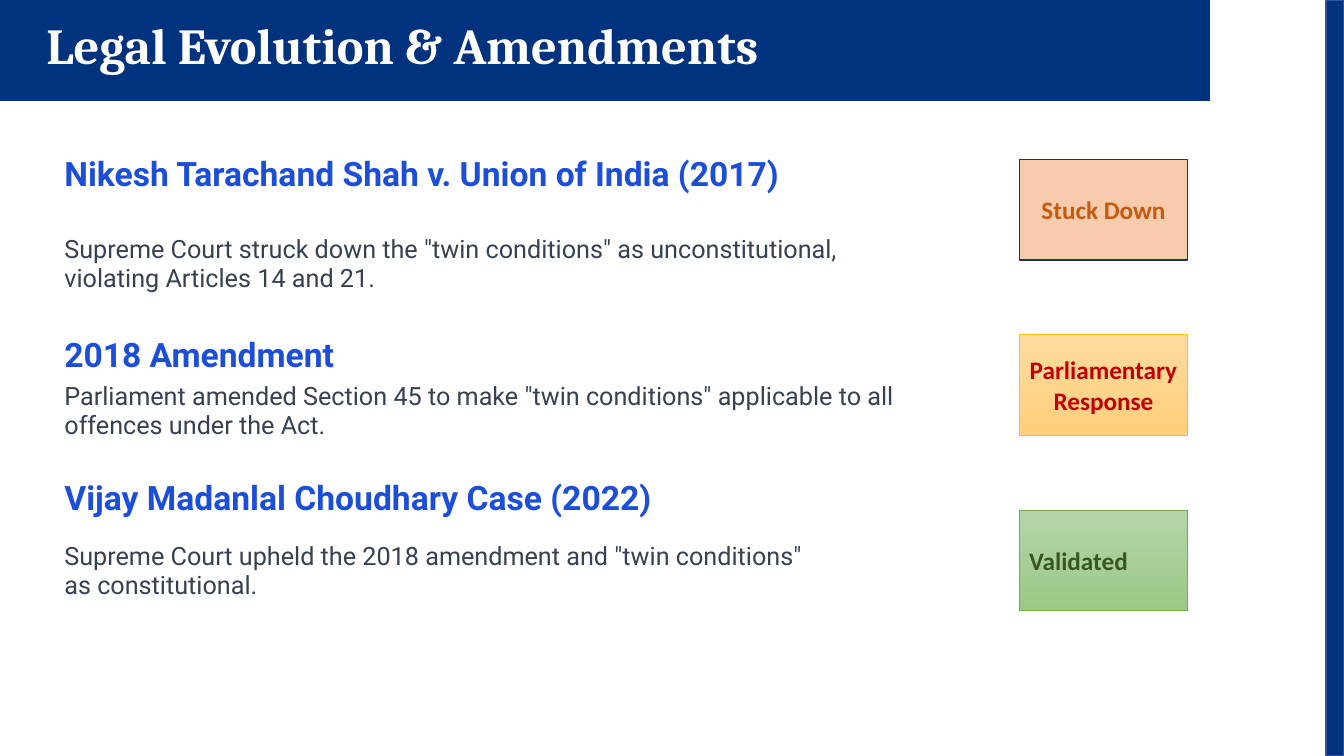
from dataclasses import dataclass

from pptx import Presentation
from pptx.dml.color import RGBColor
from pptx.enum.shapes import MSO_SHAPE
from pptx.enum.text import MSO_ANCHOR, MSO_AUTO_SIZE, PP_ALIGN
from pptx.util import Inches, Pt

RECTANGLE = MSO_SHAPE.RECTANGLE
TOP, MIDDLE = MSO_ANCHOR.TOP, MSO_ANCHOR.MIDDLE
LEFT, CENTER = PP_ALIGN.LEFT, PP_ALIGN.CENTER
NO_FIT, GROW = MSO_AUTO_SIZE.NONE, MSO_AUTO_SIZE.SHAPE_TO_FIT_TEXT
TITLE_ONLY = 5


@dataclass(frozen=True)
class Theme:
    navy: str = "00327D"
    navy_edge: str = "325491"
    white: str = "FFFFFF"
    heading: str = "1D4ED8"
    body: str = "374151"
    title_font: str = "Cambria"
    text_font: str = "Roboto"
    badge_font: str = "Calibri"
    title_size: int = 36
    heading_size: int = 24
    body_size: int = 18


@dataclass(frozen=True)
class Badge:
    label: str
    fills: tuple
    edge: str
    edge_width: float
    ink: str
    align: PP_ALIGN = CENTER


THEME = Theme()
TEXT_LEFT = 0.54
BADGE_LEFT, BADGE_TOP, BADGE_STEP = 10.11, 1.58, 1.74

HEADINGS = [
    ("Nikesh Tarachand Shah v. Union of India (2017)", 1.49, 7.47),
    ("2018 Amendment", 3.29, 6.67),
    ("Vijay Madanlal Choudhary Case (2022)", 4.71, 6.67),
]
SUMMARIES = [
    ('Supreme Court struck down the "twin conditions" as unconstitutional, '
     "violating Articles 14 and 21.", 2.27, 8.52),
    ('Parliament amended Section 45 to make "twin conditions" applicable to all '
     "offences under the Act.", 3.73, 8.52),
    ('Supreme Court upheld the 2018 amendment and "twin conditions" '
     "as constitutional.", 5.32, 7.74),
]
BADGES = [
    Badge("Stuck Down", ("F8CBAD",), "1E3256", 1, "C55A11"),
    Badge("Parliamentary Response", ("FFDB9E", "FFD07C"), "FFC000", 0.5, "C00000"),
    Badge("Validated", ("B5D5A7", "9CC987"), "70AD47", 0.5, "385723", LEFT),
]


def color(value):
    return RGBColor.from_string(value)


def style(para, font, size, ink, bold=False):
    para.font.name = font
    para.font.size = Pt(size)
    para.font.color.rgb = color(ink)
    para.font.bold = bold


def paint(shape, fills, edge=None, edge_width=1):
    shape.shadow.inherit = False
    if len(fills) == 1:
        shape.fill.solid()
        shape.fill.fore_color.rgb = color(fills[0])
    else:
        shape.fill.gradient()
        shape.fill.gradient_angle = 270
        for stop, value in zip(shape.fill.gradient_stops, fills):
            stop.color.rgb = color(value)
    if edge:
        shape.line.color.rgb = color(edge)
        shape.line.width = Pt(edge_width)
    else:
        shape.line.fill.background()


def add_frame(page):
    builder = page.shapes.build_freeform(0, 0, scale=Inches(1))
    builder.add_line_segments([(0, 1.05), (11.75, 1.05), (12.07, 0)])
    paint(builder.convert_to_shape(), (THEME.navy,))
    stripe = page.shapes.add_shape(
        RECTANGLE, Inches(13.15), 0, Inches(0.18), Inches(7.5))
    paint(stripe, (THEME.navy,), THEME.navy_edge)


def add_title(page, text):
    title = page.shapes.title
    title.left, title.top = Inches(0.36), Inches(0.16)
    title.width, title.height = Inches(9.19), Inches(0.64)
    frame = title.text_frame
    frame.text = text
    frame.auto_size = NO_FIT
    frame.vertical_anchor = TOP
    para = frame.paragraphs[0]
    para.alignment = LEFT
    para.line_spacing = 0.9
    para.space_before = Pt(10)
    style(para, THEME.title_font, THEME.title_size, THEME.white, True)
    tree = page.shapes.element
    tree.remove(title.element)
    tree.append(title.element)


def add_text(page, text, top, width, height, spacing, size, ink, bold=False):
    box = page.shapes.add_textbox(
        Inches(TEXT_LEFT), Inches(top), Inches(width), Inches(height))
    frame = box.text_frame
    frame.word_wrap = True
    frame.auto_size = GROW
    frame.text = text
    para = frame.paragraphs[0]
    para.line_spacing = Pt(spacing)
    style(para, THEME.text_font, size, ink, bold)


def add_badge(page, badge, top):
    shape = page.shapes.add_shape(
        RECTANGLE, Inches(BADGE_LEFT), Inches(top), Inches(1.67), Inches(1))
    paint(shape, badge.fills, badge.edge, badge.edge_width)
    frame = shape.text_frame
    frame.word_wrap = True
    frame.vertical_anchor = MIDDLE
    frame.text = badge.label
    para = frame.paragraphs[0]
    para.alignment = badge.align
    style(para, THEME.badge_font, THEME.body_size, badge.ink, True)


def main():
    deck = Presentation()
    deck.slide_width, deck.slide_height = Inches(13.33), Inches(7.5)
    page = deck.slides.add_slide(deck.slide_layouts[TITLE_ONLY])
    add_frame(page)
    add_title(page, "Legal Evolution & Amendments")
    for heading, summary in zip(HEADINGS, SUMMARIES):
        add_text(page, *heading, 0.48, 27, THEME.heading_size, THEME.heading, True)
        add_text(page, *summary, 0.69, 21, THEME.body_size, THEME.body)
    for index, badge in enumerate(BADGES):
        add_badge(page, badge, BADGE_TOP + index * BADGE_STEP)
    deck.save("out.pptx")


if __name__ == "__main__":
    main()
